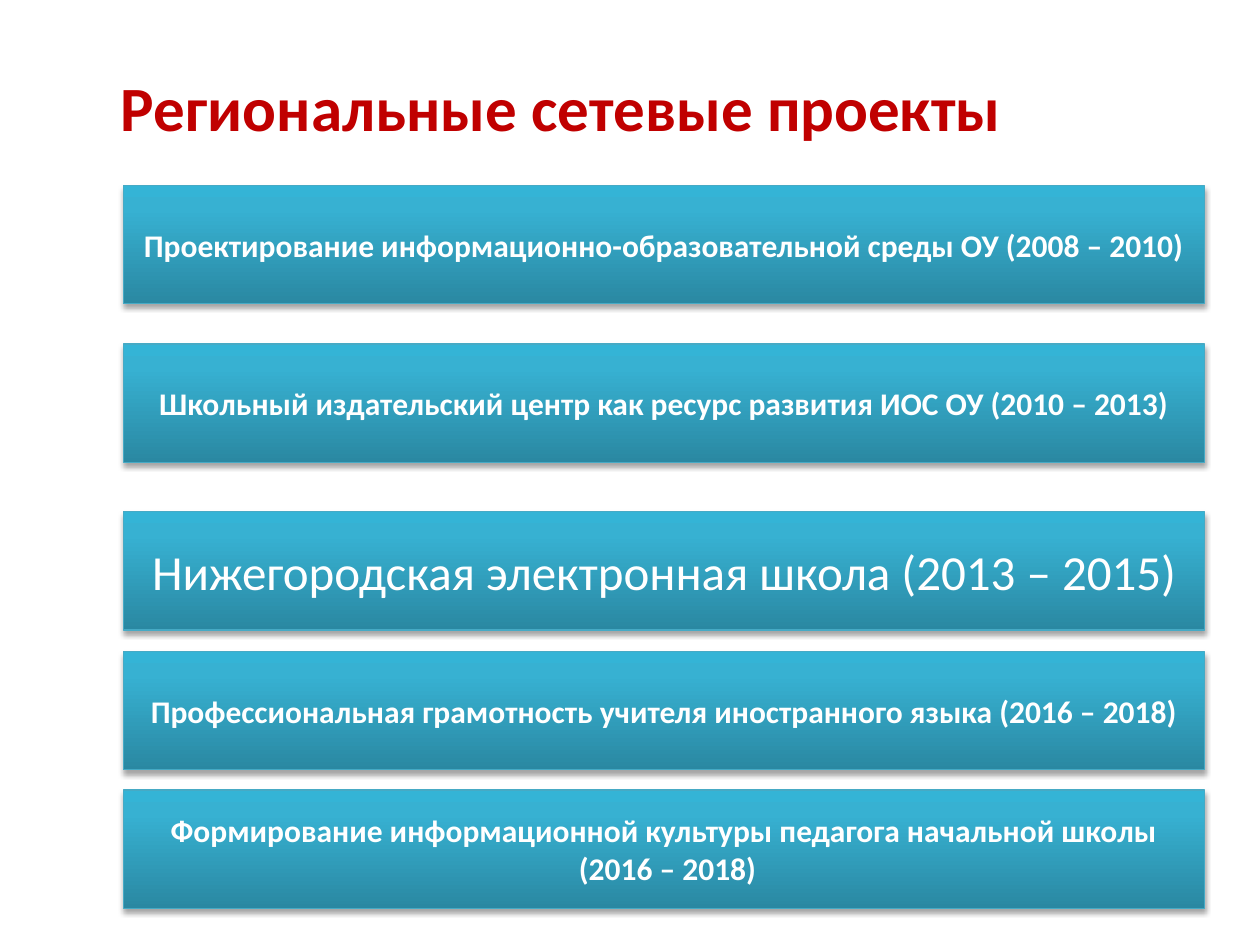
from copy import deepcopy
from lxml.etree import SubElement
from pptx import Presentation
from pptx.dml.color import RGBColor
from pptx.enum.shapes import MSO_SHAPE
from pptx.enum.text import MSO_ANCHOR, PP_ALIGN
from pptx.oxml.ns import qn
from pptx.util import Inches, Pt

hues = {"title": "C00000", "deep": "2A88A2", "mid": "37B1D2", "top": "34B4D6",
        "edge": "46AAC5", "text": "FFFFFF", "shade": "000000"}
bars = [
    (1.47, 18, "Проектирование информационно-образовательной среды ОУ (2008 – 2010)"),
    (2.73, 18, "Школьный издательский центр как ресурс развития ИОС ОУ (2010 – 2013)"),
    (4.06, 28, "Нижегородская электронная школа (2013 – 2015)"),
    (5.17, 18, "Профессиональная грамотность учителя иностранного языка (2016 – 2018)"),
    (6.27, 18, "Формирование информационной культуры педагога начальной школы\n (2016 – 2018)"),
]
stops = [(0, "deep"), (0.8, "mid"), (1, "top")]


def tint(name):
    return RGBColor.from_string(hues[name])


def style(par, size, bold, hue, align):
    par.alignment = align
    par.font.name = "Calibri"
    par.font.size = Pt(size)
    par.font.bold = bold
    par.font.color.rgb = tint(hue)


deck = Presentation()
deck.slide_width, deck.slide_height = Inches(10), Inches(7.5)
slide = deck.slides.add_slide(deck.slide_layouts[5])

title = slide.shapes.title
title.left, title.top = Inches(0.86), Inches(0.22)
title.width, title.height = Inches(8.83), Inches(1.25)
title.text_frame.text = "Региональные сетевые проекты"
title.text_frame.vertical_anchor = MSO_ANCHOR.MIDDLE
style(title.text_frame.paragraphs[0], 36, True, "title", PP_ALIGN.LEFT)

for top, size, text in bars:
    bar = slide.shapes.add_shape(MSO_SHAPE.RECTANGLE, Inches(0.98), Inches(top),
                                 Inches(8.58), Inches(0.94))
    bar.fill.gradient()
    bar.fill.gradient_angle = 90
    props = bar._element.spPr
    ramp = props.find(qn("a:gradFill")).find(qn("a:gsLst"))
    ramp.append(deepcopy(ramp[-1]))
    for stop, (place, hue) in zip(bar.fill.gradient_stops, stops):
        stop.position = place
        stop.color.rgb = tint(hue)
    bar.line.color.rgb = tint("edge")
    bar.line.width = Pt(0.75)

    bar.shadow.inherit = False
    shade = SubElement(props.find(qn("a:effectLst")), qn("a:outerShdw"),
                       blurRad=str(Pt(3.15)), dist=str(Pt(1.8)),
                       dir="5400000", rotWithShape="0")
    color = SubElement(shade, qn("a:srgbClr"), val=hues["shade"])
    SubElement(color, qn("a:alpha"), val="35000")

    frame = bar.text_frame
    frame.word_wrap = True
    frame.vertical_anchor = MSO_ANCHOR.MIDDLE
    frame.text = text
    for par in frame.paragraphs:
        style(par, size, size == 18, "text", PP_ALIGN.CENTER)

deck.save("out.pptx")
